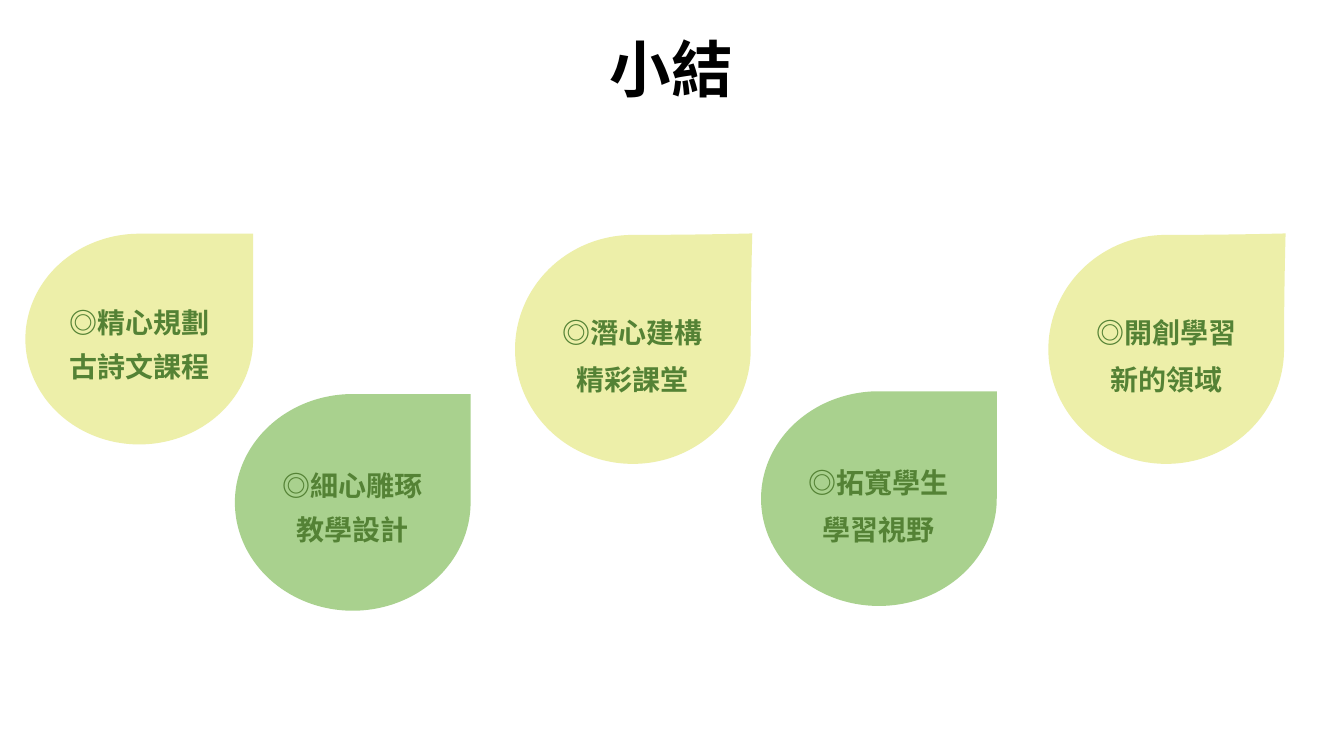
"""Build the summary slide with five teardrop points."""
from pptx import Presentation
from pptx import util as u
from pptx.dml.color import RGBColor
from pptx.enum import shapes, text

TITLE = "小結"
YELLOW = RGBColor(0xED, 0xEF, 0xA9)
GREEN = RGBColor(0xA9, 0xD1, 0x8E)
DARK_GREEN = RGBColor(0x54, 0x82, 0x35)
BLACK = RGBColor(0, 0, 0)
FONT = "Calibri"

# text, (left, top, width, height) in cm, fill, line spacing, tip
DROPS = [
    ("◎精心規劃古詩文課程", (0.64, 5.89, 5.74, 5.31), YELLOW, 1.3, 1),
    ("◎細心雕琢教學設計", (5.92, 9.93, 5.94, 5.46), GREEN, 1.3, 1),
    ("◎潛心建構精彩課堂", (12.98, 5.92, 5.94, 5.77), YELLOW, 1.4, 1.013),
    ("◎拓寬學生學習視野", (19.18, 9.86, 5.94, 5.41), GREEN, 1.4, 1),
    ("◎開創學習新的領域", (26.42, 5.92, 5.94, 5.77), YELLOW, 1.4, 1.013),
]


def write(sp, words, size, color, spacing, anchor):
    tf = sp.text_frame
    tf.word_wrap = True
    tf.vertical_anchor = anchor
    p = tf.paragraphs[0]
    p.text = words
    p.alignment = text.PP_ALIGN.CENTER
    p.line_spacing = spacing
    p.font.name = FONT
    p.font.size = u.Pt(size)
    p.font.bold = True
    p.font.color.rgb = color


def main():
    prs = Presentation()
    prs.slide_width, prs.slide_height = u.Cm(33.87), u.Cm(19.05)
    s = prs.slides.add_slide(prs.slide_layouts[6])

    for words, box, fill, spacing, tip in DROPS:
        sp = s.shapes.add_shape(shapes.MSO_SHAPE.TEAR, *map(u.Cm, box))
        sp.adjustments[0] = tip
        sp.shadow.inherit = False
        sp.fill.solid()
        sp.fill.fore_color.rgb = fill
        sp.line.fill.background()
        write(sp, words, 20, DARK_GREEN, spacing, text.MSO_ANCHOR.MIDDLE)

    title = s.shapes.add_textbox(*map(u.Cm, (0.86, 0.51, 32.13, 2.26)))
    write(title, TITLE, 44, BLACK, 1.4, text.MSO_ANCHOR.BOTTOM)
    prs.save("out.pptx")


if __name__ == "__main__":
    main()
